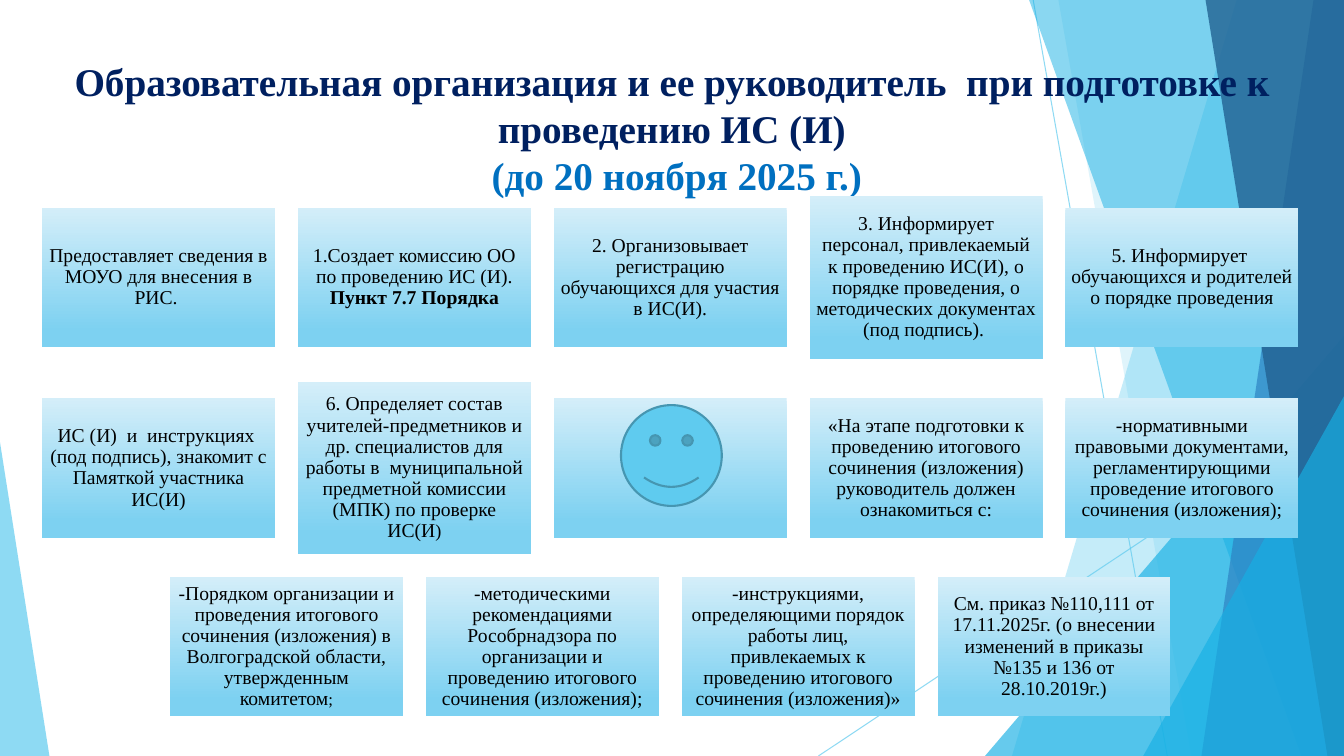
from dataclasses import dataclass

from lxml import etree
from pptx import Presentation
from pptx import util as u
from pptx.dml.color import RGBColor
from pptx.enum import shapes, text
from pptx.oxml import ns

WIDTH, HEIGHT = 960, 540
FONT = "Times New Roman"
NAVY = RGBColor(0x00, 0x20, 0x60)
BLUE = RGBColor(0x00, 0x70, 0xC0)
BLACK = RGBColor(0x00, 0x00, 0x00)
SKY = RGBColor(0x5F, 0xCB, 0xEF)
CYAN = RGBColor(0x17, 0xB0, 0xE4)
OCEAN = RGBColor(0x2E, 0x83, 0xC3)
DEEP = RGBColor(0x22, 0x62, 0x92)
SMILEY_LINE = RGBColor(0x46, 0x96, 0xB1)
CARD_TOP = RGBColor(0xD4, 0xEE, 0xF9)
CARD_BOTTOM = RGBColor(0x7D, 0xD1, 0xF1)

CARD_WIDTH, CARD_HEIGHT, CARD_GAP = 166.4, 99.8, 16.35
ROW_GAP = 16.6
GRID_TOP, GRID_CENTER = 139.7, 478.8


@dataclass
class Ray:
    start: tuple[float, float]
    end: tuple[float, float]


@dataclass
class Shard:
    top_x: float
    bottom_x: float
    color: RGBColor
    opacity: int


@dataclass
class Wedge:
    left: float
    top: float
    width: float
    apex: float
    color: RGBColor
    opacity: int


@dataclass
class Card:
    body: str = ""
    tail: str = ""
    tail_size: float = 14
    tail_bold: bool = False
    height: float = CARD_HEIGHT


DECOR = [
    Ray((738, 0), (833.8, HEIGHT)),
    Ray((WIDTH, 290.2), (584.6, HEIGHT)),
    Shard(883.4, 722.9, SKY, 36),
    Shard(756, 851, SKY, 20),
    Wedge(703.6, 239.8, 256.4, 1, CYAN, 66),
    Shard(735.1, 929.5, CYAN, 50),
    Shard(938.2, 858.2, OCEAN, 70),
    Shard(861.1, 948.2, DEEP, 80),
    Wedge(816.6, 283, 143.4, 1, CYAN, 66),
    Wedge(0, 316, 35.3, 0, SKY, 70),
]

ROWS = [
    [
        Card("Предоставляет сведения в МОУО для внесения в РИС. "),
        Card("1.Создает комиссию ОО по проведению ИС (И).", " Пункт 7.7 Порядка", tail_bold=True),
        Card("2. Организовывает регистрацию обучающихся для участия в ИС(И)."),
        Card("3. Информирует персонал, привлекаемый к проведению ИС(И), о порядке проведения, "
             "о методических документах (под подпись). ", height=116.9),
        Card("5. Информирует  обучающихся и родителей  о порядке проведения "),
    ],
    [
        Card("ИС (И)  и  инструкциях  (под подпись), знакомит с Памяткой участника ИС(И)"),
        Card("6. Определяет состав учителей-предметников и др. специалистов для работы в  "
             "муниципальной предметной комиссии (МПК) по проверке ИС(И", ")", tail_size=13, height=122.2),
        Card(),
        Card("«На этапе подготовки к проведению итогового сочинения (изложения) "
             "руководитель должен ознакомиться с:"),
        Card("-нормативными правовыми документами, регламентирующими проведение "
             "итогового сочинения (изложения);"),
    ],
    [
        Card("-Порядком организации и проведения итогового сочинения (изложения) "
             "в Волгоградской области, утвержденным комитетом", ";", tail_size=12),
        Card("-методическими рекомендациями Рособрнадзора по организации и проведению "
             "итогового сочинения (изложения);"),
        Card("-инструкциями, определяющими порядок работы лиц, привлекаемых к проведению "
             "итогового сочинения (изложения)»"),
        Card("См. приказ №110,111 от 17.11.2025г. (о внесении изменений в приказы "
             "№135 и 136 от 28.10.2019г.)"),
    ],
]


def add_text(paragraph, content: str, *, size: float = 14, color: RGBColor = BLACK, bold: bool = False) -> None:
    run = paragraph.add_run()
    run.text = content
    run.font.name = FONT
    run.font.size = u.Pt(size)
    run.font.bold = bold
    run.font.color.rgb = color


def set_opacity(shape, percent: int) -> None:
    color = shape.element.find(".//" + ns.qn("a:srgbClr"))
    etree.SubElement(color, ns.qn("a:alpha"), val=str(percent * 1000))


def add_preset(slide, preset, left: float, top: float, width: float, height: float):
    shape = slide.shapes.add_shape(preset, u.Pt(left), u.Pt(top), u.Pt(width), u.Pt(height))
    shape.shadow.inherit = False
    shape.line.fill.background()
    return shape


def add_ray(slide, ray: Ray) -> None:
    points = [u.Pt(value) for value in (*ray.start, *ray.end)]
    line = slide.shapes.add_connector(shapes.MSO_CONNECTOR.STRAIGHT, *points)
    line.line.color.rgb = SKY
    line.line.width = u.Pt(0.75)
    set_opacity(line, 70)
    etree.SubElement(line.element.spPr, ns.qn("a:effectLst"))


def add_filled(slide, item: Shard | Wedge) -> None:
    if isinstance(item, Shard):
        builder = slide.shapes.build_freeform(u.Pt(item.top_x), 0)
        corners = [(WIDTH, 0), (WIDTH, HEIGHT), (item.bottom_x, HEIGHT)]
        builder.add_line_segments([(u.Pt(x), u.Pt(y)) for x, y in corners], close=True)
        shape = builder.convert_to_shape()
        shape.shadow.inherit = False
        shape.line.fill.background()
    else:
        shape = add_preset(slide, shapes.MSO_SHAPE.ISOSCELES_TRIANGLE,
                           item.left, item.top, item.width, HEIGHT - item.top)
        shape.adjustments[0] = item.apex
    shape.fill.solid()
    shape.fill.fore_color.rgb = item.color
    set_opacity(shape, item.opacity)


def format_title(slide) -> None:
    title = slide.shapes.title
    title.left, title.top, title.width, title.height = (u.Pt(value) for value in (15.1, 37.4, 929.5, 79.2))
    frame = title.text_frame
    frame.word_wrap = True
    frame.auto_size = text.MSO_AUTO_SIZE.NONE
    frame.vertical_anchor = text.MSO_ANCHOR.TOP
    paragraph = frame.paragraphs[0]
    paragraph.alignment = text.PP_ALIGN.CENTER
    add_text(paragraph, "Образовательная организация и ее руководитель  при подготовке к проведению ИС (И)",
             size=28, color=NAVY, bold=True)
    paragraph.add_line_break()
    add_text(paragraph, " ", size=28, color=NAVY, bold=True)
    add_text(paragraph, "(до 20 ноября 2025 г.)", size=28, color=BLUE, bold=True)
    title.element.getparent().append(title.element)


def add_card(slide, card: Card, left: float, center: float) -> None:
    shape = add_preset(slide, shapes.MSO_SHAPE.RECTANGLE, left, center - card.height / 2, CARD_WIDTH, card.height)
    shape.fill.gradient()
    shape.fill.gradient_angle = 270
    for stop, color, position in zip(shape.fill.gradient_stops, (CARD_TOP, CARD_BOTTOM), (0, 0.88)):
        stop.color.rgb = color
        stop.position = position
    if not card.body:
        return
    frame = shape.text_frame
    frame.word_wrap = True
    frame.vertical_anchor = text.MSO_ANCHOR.MIDDLE
    frame.margin_left = frame.margin_right = frame.margin_top = frame.margin_bottom = u.Pt(4.2)
    paragraph = frame.paragraphs[0]
    paragraph.alignment = text.PP_ALIGN.CENTER
    paragraph.line_spacing = 0.9
    add_text(paragraph, card.body)
    if card.tail:
        add_text(paragraph, card.tail, size=card.tail_size, bold=card.tail_bold)


def add_cards(slide) -> None:
    top = GRID_TOP
    pitch = CARD_WIDTH + CARD_GAP
    for row in ROWS:
        row_height = max(card.height for card in row)
        left = GRID_CENTER - (len(row) * pitch - CARD_GAP) / 2
        for column, card in enumerate(row):
            add_card(slide, card, left + column * pitch, top + row_height / 2)
        top += row_height + ROW_GAP


def add_smiley(slide) -> None:
    smiley = add_preset(slide, shapes.MSO_SHAPE.SMILEY_FACE, 443.6, 289.4, 72, 72)
    smiley.fill.solid()
    smiley.fill.fore_color.rgb = SKY
    smiley.line.color.rgb = SMILEY_LINE
    smiley.line.width = u.Pt(1.5)


def main() -> None:
    presentation = Presentation()
    presentation.slide_width, presentation.slide_height = u.Pt(WIDTH), u.Pt(HEIGHT)
    slide = presentation.slides.add_slide(presentation.slide_layouts.get_by_name("Title Only"))
    for item in DECOR:
        add_ray(slide, item) if isinstance(item, Ray) else add_filled(slide, item)
    format_title(slide)
    add_cards(slide)
    add_smiley(slide)
    presentation.save("out.pptx")


if __name__ == "__main__":
    main()
